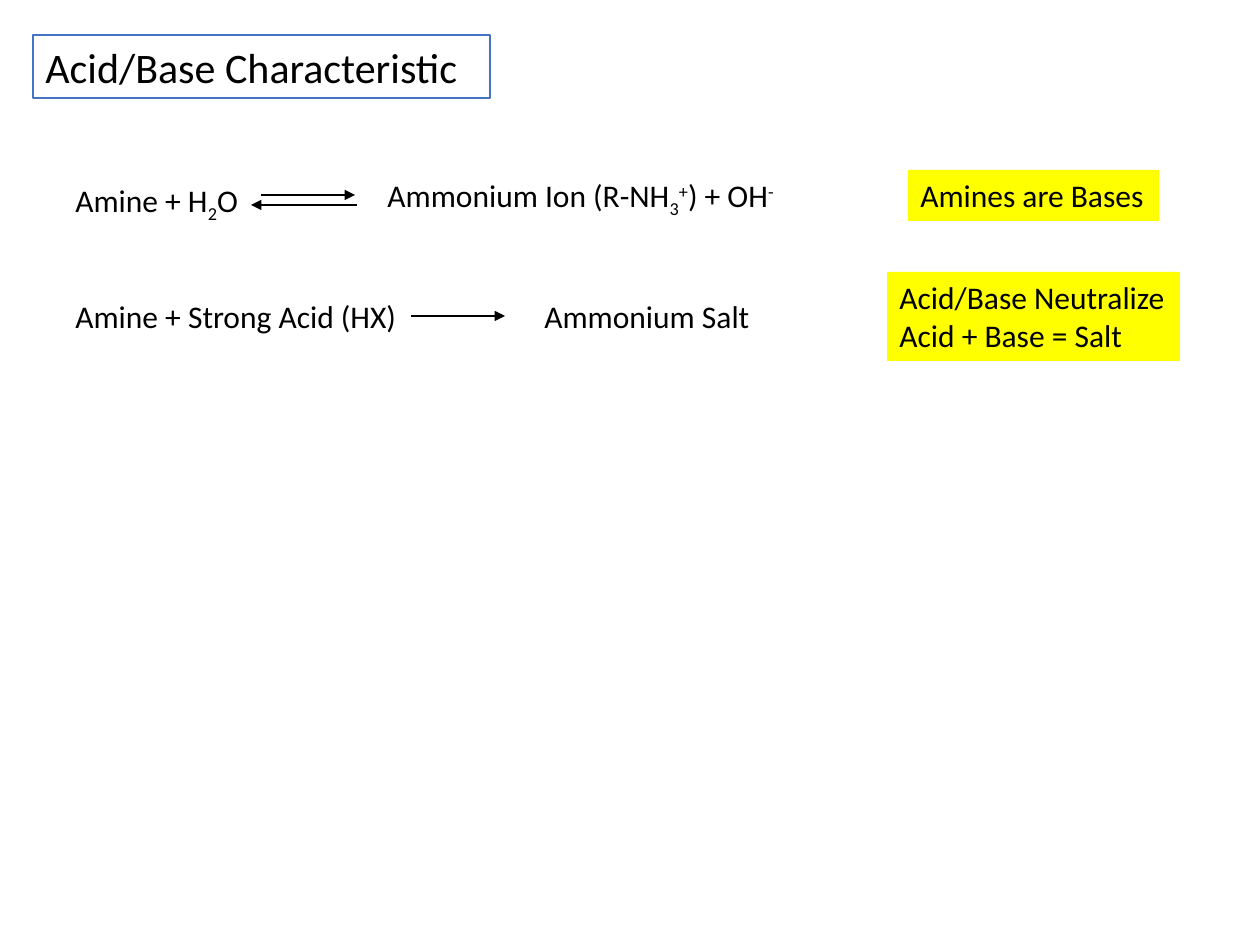
import pptx
import pptx.util
import pptx.dml.color
import pptx.enum.shapes
import pptx.enum.text
import pptx.oxml.ns
import lxml.etree

RGB = pptx.dml.color.RGBColor
BLACK = RGB(0x00, 0x00, 0x00)
WHITE = RGB(0xFF, 0xFF, 0xFF)
BLUE = RGB(0x44, 0x72, 0xC4)
YELLOW = RGB(0xFF, 0xFF, 0x00)

PX = 914400 / 126
FONT = "Calibri"
SUB, SUP = -25, 30

TITLE = ((33, 35, 457, 63), [["Acid/Base Characteristic"]])
EQUATION_PARTS = [
    ((63, 175, 199, 51), [["Amine + H", ("2", SUB), "O"]]),
    ((375, 170, 420, 51),
     [["Ammonium Ion (R-NH", ("3", SUB), ("+", SUP), ") + OH", ("-", SUP)]]),
    ((63, 291, 358, 51), [["Amine + Strong Acid (HX)"]]),
    ((532, 291, 233, 51), [["Ammonium Salt"]]),
]
NOTES = [
    ((908, 170, 251, 51), [["Amines are Bases"]]),
    ((887, 272, 293, 89), [["Acid/Base Neutralize"], ["Acid + Base = Salt"]]),
]
EQUILIBRIUM_ARROWS = [(357, 205, 251, 205), (261, 195, 355, 195)]
SALT_ARROW = (411, 316, 505, 316)


def emu(lengths):
    return [round(v * PX) for v in lengths]


def add_text(shapes, box, paragraphs, size=18, fill=None, line=None):
    s = shapes.add_textbox(*emu(box))
    if fill is not None:
        s.fill.solid()
        s.fill.fore_color.rgb = fill
    if line is not None:
        s.line.color.rgb = line
        s.line.width = pptx.util.Pt(1)
    tf = s.text_frame
    tf.word_wrap = False
    tf.auto_size = pptx.enum.text.MSO_AUTO_SIZE.SHAPE_TO_FIT_TEXT
    for i, parts in enumerate(paragraphs):
        p = tf.add_paragraph() if i else tf.paragraphs[0]
        for part in parts:
            text, shift = (part, 0) if isinstance(part, str) else part
            r = p.add_run()
            r.text = text
            r.font.name = FONT
            r.font.size = pptx.util.Pt(size)
            r.font.color.rgb = BLACK
            if shift:
                r._r.get_or_add_rPr().set("baseline", str(shift * 1000))


def add_arrow(shapes, ends):
    s = shapes.add_connector(pptx.enum.shapes.MSO_CONNECTOR.STRAIGHT, *emu(ends))
    s.line.color.rgb = BLACK
    s.line.width = pptx.util.Pt(1)
    qn = pptx.oxml.ns.qn
    lxml.etree.SubElement(s.line._get_or_add_ln(), qn("a:tailEnd"), type="triangle")
    lxml.etree.SubElement(s._element.spPr, qn("a:effectLst"))


def main():
    prs = pptx.Presentation()
    prs.slide_width, prs.slide_height = emu((1260, 945))
    shapes = prs.slides.add_slide(prs.slide_layouts[6]).shapes
    add_text(shapes, *TITLE, size=24, fill=WHITE, line=BLUE)
    for box, paragraphs in EQUATION_PARTS:
        add_text(shapes, box, paragraphs)
    for box, paragraphs in NOTES:
        add_text(shapes, box, paragraphs, fill=YELLOW)
    equilibrium = shapes.add_group_shape()
    for ends in EQUILIBRIUM_ARROWS:
        add_arrow(equilibrium.shapes, ends)
    add_arrow(shapes, SALT_ARROW)
    prs.save("out.pptx")


if __name__ == "__main__":
    main()
